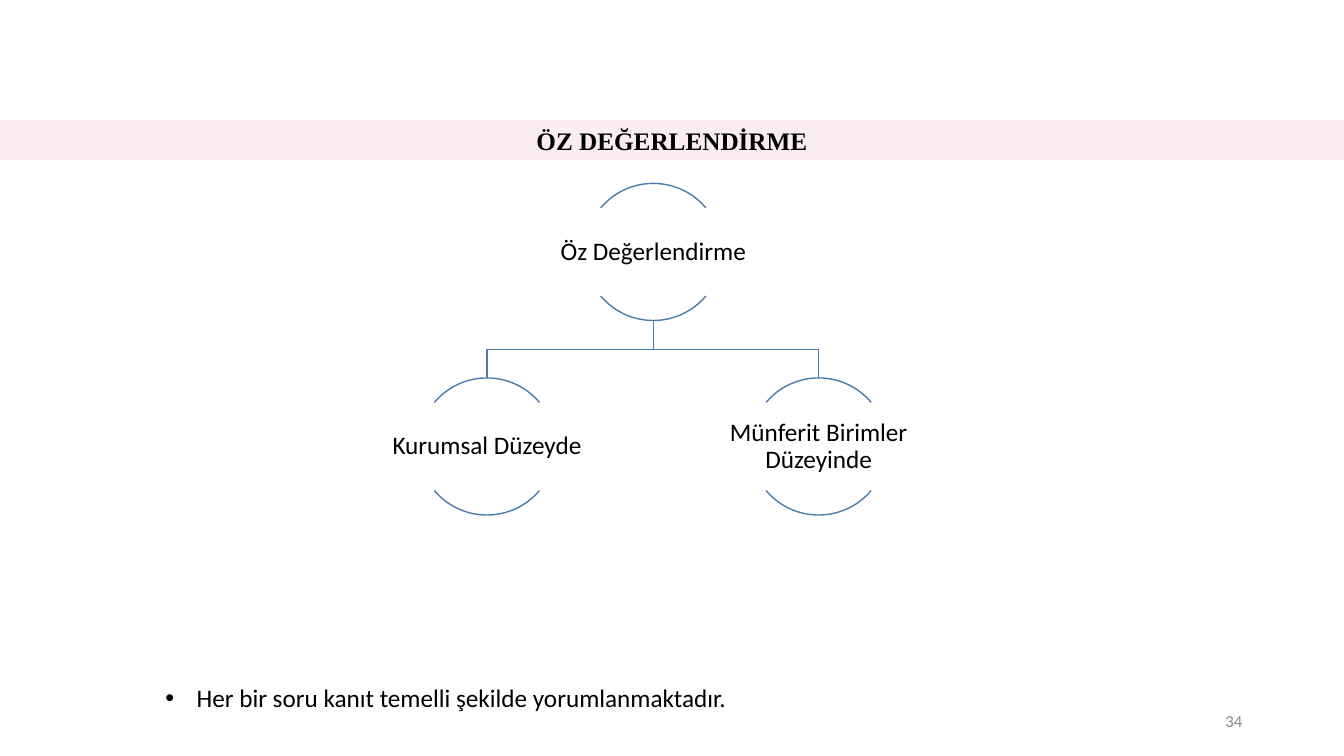
import dataclasses

import lxml.etree
import pptx
import pptx.dml.color
import pptx.enum.shapes
import pptx.enum.text
import pptx.oxml.ns
import pptx.util

Inches = pptx.util.Inches
ALIGN = pptx.enum.text.PP_ALIGN
ANCHOR = pptx.enum.text.MSO_ANCHOR

COLORS = {"band": "F5C3DD", "line": "497CAB", "text": "000000", "number": "898989"}
BAND_OPACITY = 30
CIRCLE = 1.36
LABEL_WIDTH, LABEL_HEIGHT = 2.72, 0.87
ARC_ANGLES = ((132, 192), (24, 84))  # top and bottom arcs


@dataclasses.dataclass(frozen=True)
class Node:
    text: str
    center: float
    top: float


ROOT = Node("Öz Değerlendirme", 6.48, 1.82)
CHILDREN = (
    Node("Kurumsal Düzeyde", 4.83, 3.75),
    Node("Münferit Birimler Düzeyinde", 8.12, 3.75),
)


def color(name: str) -> pptx.dml.color.RGBColor:
    return pptx.dml.color.RGBColor.from_string(COLORS[name])


def set_attributes(target, values: dict) -> None:
    for name, value in values.items():
        setattr(target, name, value)


def place(shape, left: float, top: float, width: float, height: float) -> None:
    box = {"left": left, "top": top, "width": width, "height": height}
    set_attributes(shape, {name: Inches(value) for name, value in box.items()})


def write_text(shape, text: str, frame_format: dict, paragraph_format: dict,
               font_format: dict, color_name: str = "text") -> None:
    frame = shape.text_frame
    frame.text = text
    set_attributes(frame, {"auto_size": pptx.enum.text.MSO_AUTO_SIZE.NONE,
                           "word_wrap": True, **frame_format})
    paragraph = frame.paragraphs[0]
    set_attributes(paragraph, {"space_before": pptx.util.Pt(0), **paragraph_format})
    font = paragraph.runs[0].font
    set_attributes(font, {"name": "Calibri", "size": pptx.util.Pt(18), **font_format})
    font.color.rgb = color(color_name)


def style_outline(shape) -> None:
    shape.shadow.inherit = False
    shape.fill.background()
    shape.line.color.rgb = color("line")
    shape.line.width = pptx.util.Pt(1)


def add_title(slide) -> None:
    title = slide.shapes.title
    place(title, 0, 1.19, 13.33, 0.4)
    title.fill.solid()
    title.fill.fore_color.rgb = color("band")
    fill_color = title.fill._xPr.find(".//" + pptx.oxml.ns.qn("a:srgbClr"))
    lxml.etree.SubElement(fill_color, pptx.oxml.ns.qn("a:alpha"),
                          val=str(BAND_OPACITY * 1000))
    write_text(title, "ÖZ DEĞERLENDİRME", {"vertical_anchor": ANCHOR.MIDDLE},
               {"alignment": ALIGN.CENTER}, {"name": "Times New Roman", "bold": True})


def add_bullet_list(slide) -> None:
    body = slide.placeholders[1]
    place(body, 1.54, 6.72, 5.83, 0.4)
    write_text(body, "Her bir soru kanıt temelli şekilde yorumlanmaktadır.",
               {"word_wrap": False, "vertical_anchor": ANCHOR.TOP},
               {"alignment": ALIGN.LEFT}, {})
    properties = body.text_frame.paragraphs[0]._p.get_or_add_pPr()
    indent = Inches(0.31)
    properties.set("marL", str(indent))
    properties.set("indent", str(-indent))
    for tag, values in (("a:buFont", {"typeface": "Arial"}), ("a:buChar", {"char": "•"})):
        lxml.etree.SubElement(properties, pptx.oxml.ns.qn(tag), values)


def add_slide_number(slide) -> None:
    box = slide.shapes.add_textbox(0, 0, 0, 0)
    place(box, 9.42, 6.95, 3, 0.4)
    write_text(box, "34", {"vertical_anchor": ANCHOR.MIDDLE},
               {"alignment": ALIGN.RIGHT}, {"size": pptx.util.Pt(12)}, "number")


def add_branch(slide, parent: Node, child: Node) -> None:
    """Draw the elbow line from the foot of a parent to the top of a child."""
    start = parent.top + CIRCLE
    middle = (start + child.top) / 2
    points = [(parent.center, middle), (child.center, middle), (child.center, child.top)]
    builder = slide.shapes.build_freeform(Inches(parent.center), Inches(start))
    builder.add_line_segments([(Inches(x), Inches(y)) for x, y in points], close=False)
    style_outline(builder.convert_to_shape())


def add_node(slide, node: Node) -> None:
    for angles in ARC_ANGLES:
        arc = slide.shapes.add_shape(pptx.enum.shapes.MSO_SHAPE.ARC, 0, 0, 0, 0)
        place(arc, node.center - CIRCLE / 2, node.top, CIRCLE, CIRCLE)
        for index, angle in enumerate(angles):
            arc.adjustments[index] = angle
        style_outline(arc)
    label = slide.shapes.add_textbox(0, 0, 0, 0)
    place(label, node.center - LABEL_WIDTH / 2,
          node.top + (CIRCLE - LABEL_HEIGHT) / 2, LABEL_WIDTH, LABEL_HEIGHT)
    margins = {f"margin_{side}": Inches(0.01) for side in ("left", "top", "right", "bottom")}
    write_text(label, node.text, {"vertical_anchor": ANCHOR.MIDDLE, **margins},
               {"alignment": ALIGN.CENTER, "line_spacing": 0.9}, {})


def main() -> None:
    presentation = pptx.Presentation()
    presentation.slide_width = Inches(13.33)
    presentation.slide_height = Inches(7.5)
    slide = presentation.slides.add_slide(presentation.slide_layouts[1])
    add_title(slide)
    add_bullet_list(slide)
    add_slide_number(slide)
    for child in reversed(CHILDREN):
        add_branch(slide, ROOT, child)
    for node in (ROOT, *CHILDREN):
        add_node(slide, node)
    presentation.save("out.pptx")


if __name__ == "__main__":
    main()
